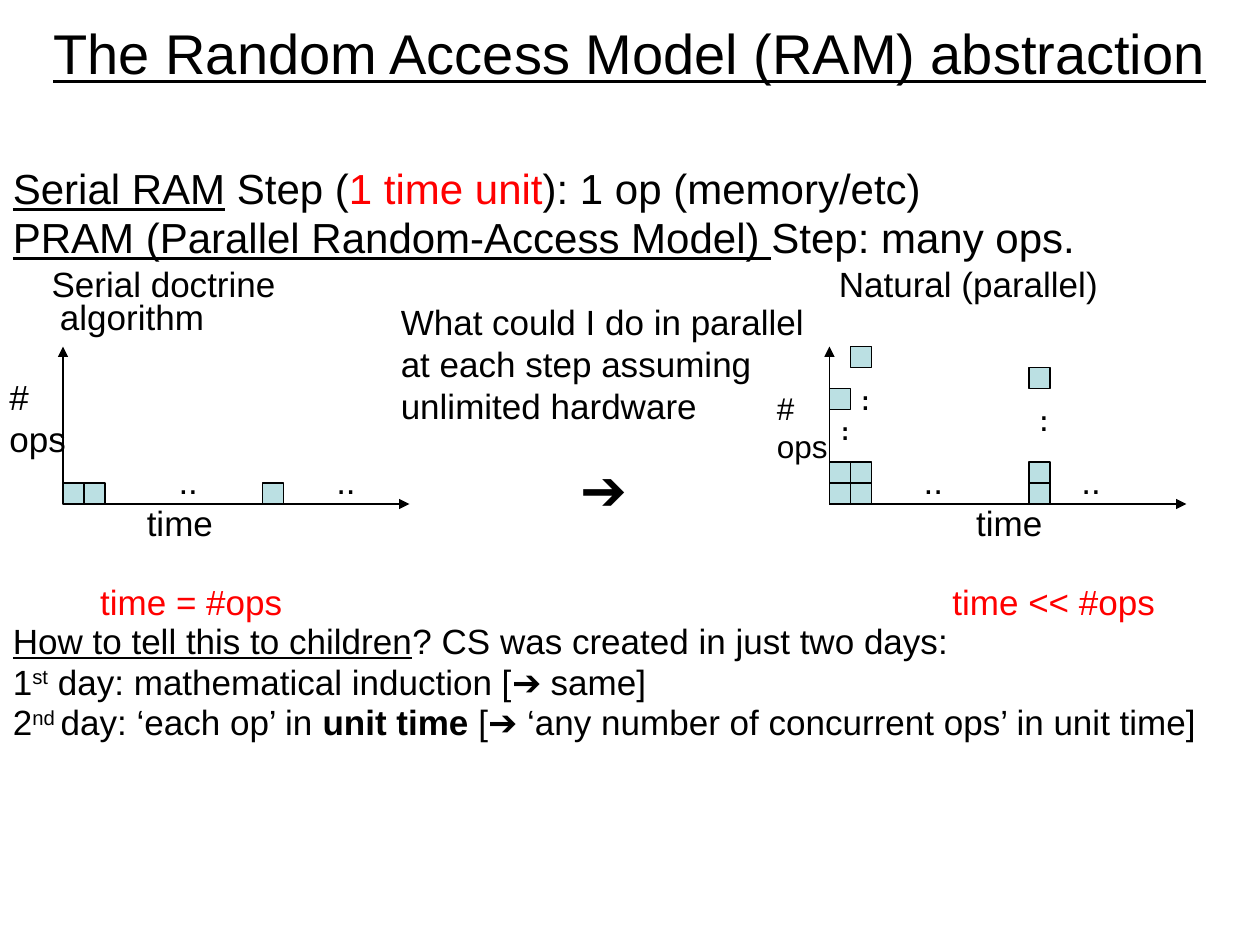
import pptx
import pptx.dml.color
import pptx.enum.shapes
import pptx.enum.text
import pptx.oxml.ns
import pptx.util
from lxml import etree

Cm, Pt = pptx.util.Cm, pptx.util.Pt
BLACK = pptx.dml.color.RGBColor(0x00, 0x00, 0x00)
RED = pptx.dml.color.RGBColor(0xFF, 0x00, 0x00)
CELL_FILL = pptx.dml.color.RGBColor(0xBB, 0xE0, 0xE3)
FONT = "Arial"
CELL = 2.54 / 6  # side of one operation square, in cm
AXIS_HEIGHT = 7.5  # in cells

# Content: a run is (text, styles), a paragraph is a list of runs
TITLE = "The Random Access Model (RAM) abstraction"
DEFINITIONS = [
    [("Serial RAM", "underline"), (" Step (", ""), ("1 time unit", "red"),
     ("): 1 op (memory/etc)", "")],
    [("PRAM (Parallel Random-Access Model) ", "underline"), ("Step: many ops.", "")],
]
STORY = [
    [("How to tell this to children", "underline"),
     ("? CS was created in just two days:", "")],
    [("1", ""), ("st", "super"), (" day: mathematical induction [➔ same]", "")],
    [("2", ""), ("nd ", "super"), ("day: ‘each op’ in ", ""), ("unit time ", "bold"),
     ("[➔ ‘any number of concurrent ops’ in unit time]", "")],
]
QUESTION = "What could I do in parallel at each step assuming unlimited hardware"

# Charts in cells: origin, length of the time axis, (column, row) of each operation
CHARTS = [
    {"origin": (3, 24), "length": 16.5, "operations": [(0, 0), (1, 0), (9.5, 0)]},
    {"origin": (39.5, 24), "length": 17,
     "operations": [(0, 0), (0, 1), (0, 4.5), (1, 0), (1, 1), (1, 6.5),
                    (9.5, 0), (9.5, 1), (9.5, 5.5)]},
]

# Labels: lines, left, top, width in cm, size, style
LABELS = [
    (["Serial doctrine"], 0.79, 5.16, 5.5, 20, ""),
    (["algorithm"], 0.96, 5.84, 3.9, 20, ""),
    (["Natural (parallel)"], 16.66, 5.16, 6.2, 20, ""),
    (["time = #ops"], 1.77, 11.58, 4.7, 20, "red"),
    (["time << #ops"], 18.95, 11.58, 5.1, 20, "red"),
    (["#", "ops"], -0.06, 7.44, 2, 20, ""),
    (["#", "ops"], 15.41, 7.72, 2, 18, ""),
    (["time"], 2.71, 9.98, 2.2, 20, ""),
    (["time"], 19.43, 9.98, 2.2, 20, ""),
]
ELLIPSIS_LEFTS = [3.35, 6.53, 18.37, 21.55]
# Vertical dots: left, top, line spacing of the second dot
VERTICAL_DOTS = [(16.69, 7.87, 0.05), (17.1, 7.24, 0.1), (20.7, 7.65, 0.1)]


def add_run(paragraph, text, size, style=""):
    run = paragraph.add_run()
    run.text = text
    run.font.name = FONT
    run.font.size = Pt(size)
    run.font.color.rgb = RED if style == "red" else BLACK
    if style == "underline":
        run.font.underline = True
    elif style == "bold":
        run.font.bold = True
    elif style == "super":
        run.font._element.set("baseline", "30000")


def add_text(slide, paragraphs, left, top, width, height, size):
    box = slide.shapes.add_textbox(Cm(left), Cm(top), Cm(width), Cm(height))
    frame = box.text_frame
    frame.word_wrap = True
    for index, runs in enumerate(paragraphs):
        paragraph = frame.add_paragraph() if index else frame.paragraphs[0]
        for text, style in runs:
            add_run(paragraph, text, size, style)
    return frame


def add_label(slide, lines, left, top, width, size=20, style=""):
    height = 0.25 + len(lines) * size * 0.04
    paragraphs = [[(line, style)] for line in lines]
    return add_text(slide, paragraphs, left, top, width, height, size)


def add_axis(slide, start, end):
    axis = slide.shapes.add_connector(
        pptx.enum.shapes.MSO_CONNECTOR.STRAIGHT,
        *(Cm(cells * CELL) for cells in start + end))
    axis.line.color.rgb = BLACK
    axis.line.width = Pt(0.75)
    qn = pptx.oxml.ns.qn
    etree.SubElement(axis.line._get_or_add_ln(), qn("a:tailEnd"), type="triangle")
    etree.SubElement(axis._element.spPr, qn("a:effectLst"))


def add_chart_drawing(slide, origin, length, operations):
    x, y = origin
    add_axis(slide, origin, (x, y - AXIS_HEIGHT))
    add_axis(slide, origin, (x + length, y))
    for column, row in operations:
        square = slide.shapes.add_shape(
            pptx.enum.shapes.MSO_SHAPE.RECTANGLE,
            Cm((x + column) * CELL), Cm((y - row - 1) * CELL), Cm(CELL), Cm(CELL))
        square.shadow.inherit = False
        square.fill.solid()
        square.fill.fore_color.rgb = CELL_FILL
        square.line.color.rgb = BLACK
        square.line.width = Pt(0.75)


def main():
    presentation = pptx.Presentation()
    presentation.slide_width, presentation.slide_height = Cm(25.4), Cm(19.05)
    slide = presentation.slides.add_slide(presentation.slide_layouts[5])

    # Title
    title = slide.shapes.title
    title.left, title.top, title.width, title.height = Cm(0), Cm(0), Cm(25.4), Cm(2.12)
    title.text_frame.vertical_anchor = pptx.enum.text.MSO_ANCHOR.MIDDLE
    paragraph = title.text_frame.paragraphs[0]
    paragraph.alignment = pptx.enum.text.PP_ALIGN.CENTER
    add_run(paragraph, TITLE, 32, "underline")

    # Body text
    for paragraphs, top, height, size in ((DEFINITIONS, 3.22, 2.22, 24),
                                          (STORY, 12.41, 2.72, 20)):
        frame = add_text(slide, paragraphs, 0.01, top, 25.39, height, size)
        for paragraph in frame.paragraphs:
            paragraph.line_spacing = 0.97

    # Charts
    for chart in CHARTS:
        add_chart_drawing(slide, **chart)

    # Question and arrow between the charts
    frame = add_text(slide, [[(QUESTION, "")]], 7.83, 5.94, 8.68, 4.83, 20)
    arrow = frame.add_paragraph()
    arrow.alignment = pptx.enum.text.PP_ALIGN.CENTER
    arrow.space_before = Pt(16)
    add_run(arrow, "➔", 32)

    # Labels and dots
    for label in LABELS:
        add_label(slide, *label)
    for left in ELLIPSIS_LEFTS:
        add_label(slide, [".."], left, 9.14, 1.3)
    for left, top, spacing in VERTICAL_DOTS:
        frame = add_label(slide, [".", "."], left, top, 0.75)
        frame.paragraphs[1].line_spacing = spacing

    presentation.save("out.pptx")


if __name__ == "__main__":
    main()
